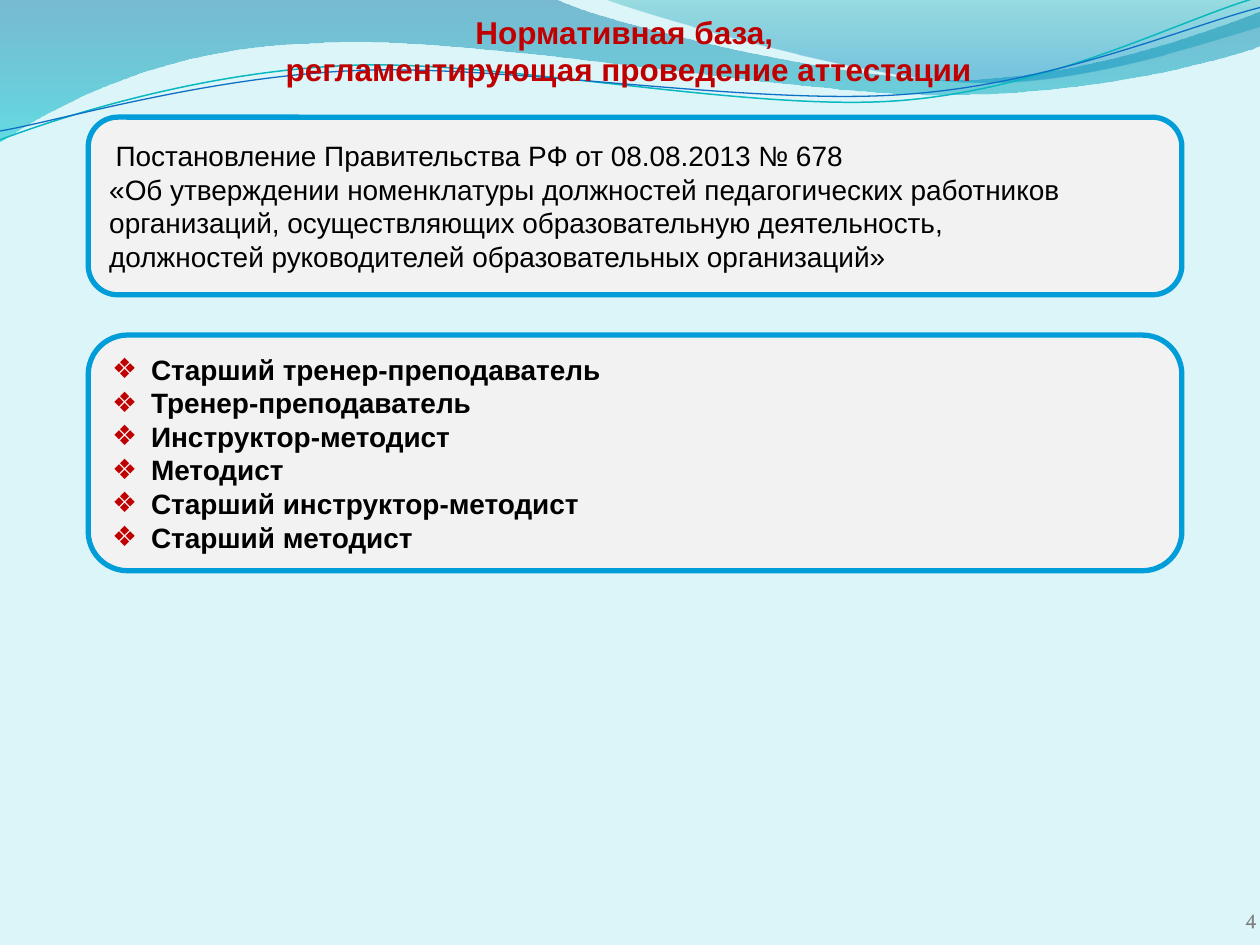
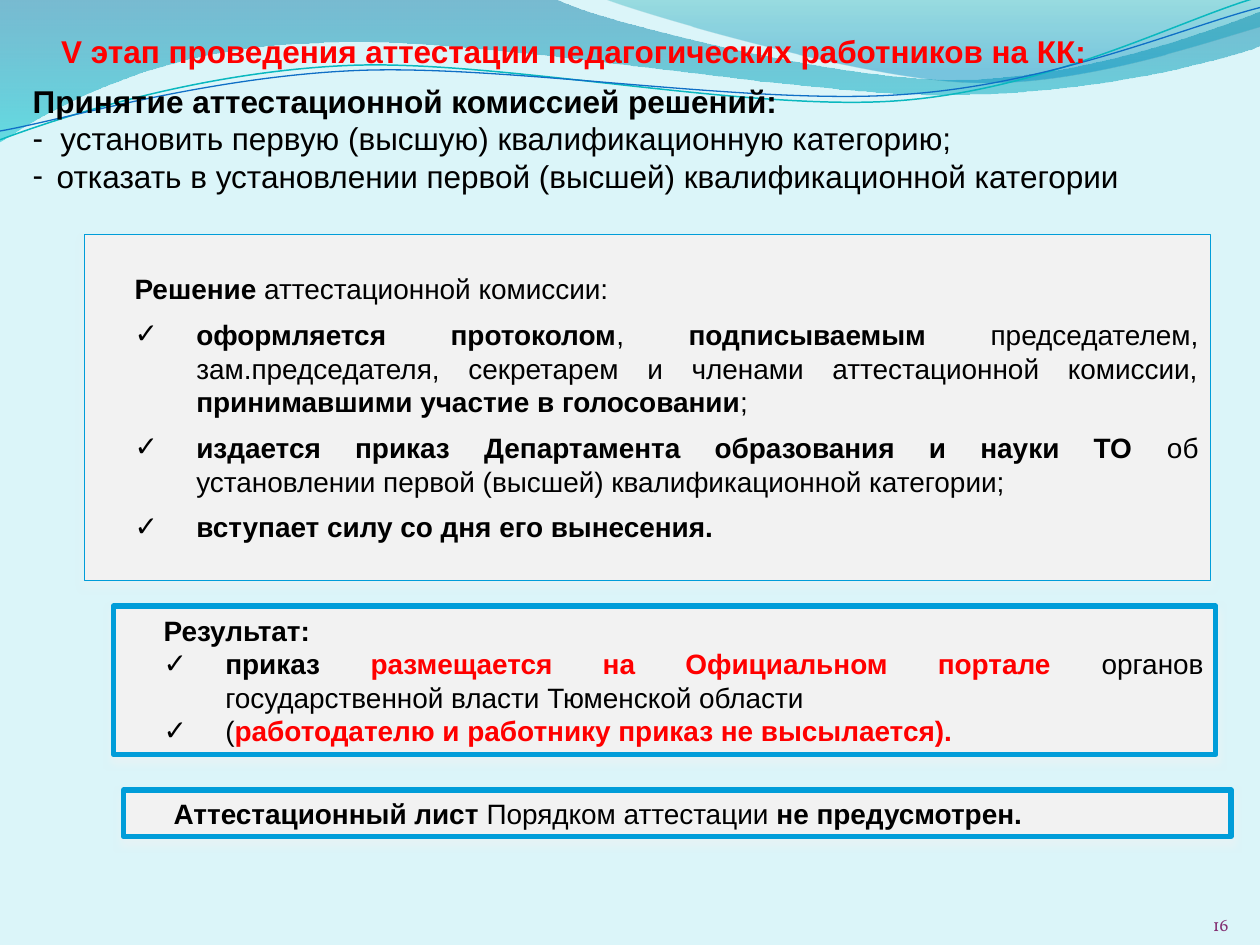
from lxml import etree
from pptx import Presentation, util as u
from pptx.dml.color import RGBColor
from pptx.enum import shapes, text
from pptx.oxml.ns import qn

COLORS = {
    "background": "DBF5F9", "card": "F2F2F2", "border": "009DD9",
    "black": "000000", "dark_red": "C00000", "red": "FF0000",
    "gray": "808080", "purple": "832F72", "teal_line": "0AB8BF", "blue_line": "0F6FC6",
    "wide_top": "0074A1", "wide_bottom": "00C6CF",
    "right_top": "00A1A9", "right_bottom": "008BBF", "shadow": "F2F2F2",
}
COLORS = {name: RGBColor.from_string(value) for name, value in COLORS.items()}
FONT = "Arial"
LEFT, CENTER, RIGHT, JUSTIFY = (text.PP_ALIGN.LEFT, text.PP_ALIGN.CENTER,
                                text.PP_ALIGN.RIGHT, text.PP_ALIGN.JUSTIFY)
TOP, MIDDLE, BOTTOM = (text.MSO_ANCHOR.TOP, text.MSO_ANCHOR.MIDDLE, text.MSO_ANCHOR.BOTTOM)
RECT, ROUNDED = shapes.MSO_SHAPE.RECTANGLE, shapes.MSO_SHAPE.ROUNDED_RECTANGLE


def add_para(frame, spans, size=16, align=LEFT, left=0, indent=0,
             bullet=None, bullet_color="black", before=0, font=FONT):
    """Add a paragraph of (words, bold, colour) spans; the first fills the empty one."""
    para = frame.paragraphs[0]
    if para.runs:
        para = frame.add_paragraph()
    para.alignment = align
    para.space_before = u.Pt(before)
    props = para._p.get_or_add_pPr()
    props.set("marL", str(u.Inches(left)))
    props.set("indent", str(u.Inches(indent)))
    if bullet:
        color = etree.SubElement(props, qn("a:buClr"))
        etree.SubElement(color, qn("a:srgbClr"), val=str(COLORS[bullet_color]))
        etree.SubElement(props, qn("a:buFont"), typeface=FONT)
        etree.SubElement(props, qn("a:buChar"), char=bullet)
    else:
        etree.SubElement(props, qn("a:buNone"))
    for words, bold, color in spans:
        span = para.add_run()
        span.text = words
        span.font.name = font
        span.font.size = u.Pt(size)
        span.font.bold = bold
        span.font.color.rgb = COLORS[color]


def add_card(page, kind, place, line_width=3, shadow=False):
    """Add a bordered grey card and return its text frame."""
    card = page.shapes.add_shape(kind, *map(u.Inches, place))
    card.fill.solid()
    card.fill.fore_color.rgb = COLORS["card"]
    card.line.color.rgb = COLORS["border"]
    card.line.width = u.Pt(line_width)
    card.shadow.inherit = False
    if shadow:
        effects = card._element.spPr.find(qn("a:effectLst"))
        outer = etree.SubElement(effects, qn("a:outerShdw"), blurRad=str(u.Pt(4.5)),
                                 dist=str(u.Pt(3)), dir="5400000", rotWithShape="0")
        color = etree.SubElement(outer, qn("a:srgbClr"), val=str(COLORS["shadow"]))
        etree.SubElement(color, qn("a:alpha"), val="48000")
    card.text_frame.word_wrap = True
    card.text_frame.vertical_anchor = MIDDLE
    return card.text_frame


deck = Presentation()
deck.slide_width, deck.slide_height = u.Inches(10), u.Inches(7.5)
master = deck.slide_master
master.background.fill.solid()
master.background.fill.fore_color.rgb = COLORS["background"]
title_only = deck.slide_layouts[5]
rules_page = deck.slides.add_slide(title_only)
stage_page = deck.slides.add_slide(title_only)

# Waves shared through the master: a 2-number step is a line, a 6-number step a curve
waves = [
    ([(0, 0), (4.4, -0.01), (4.76, 0.17, 6.64, 0.63, 7.58, 0.63),
      (8.53, 0.63, 9.58, 0.26, 10, 0.09), (10.01, 0.36),
      (9.83, 0.44, 8.7, 0.76, 7.46, 0.75), (6.22, 0.75, 3.82, 0.28, 2.57, 0.34),
      (1.29, 0.36, 0.46, 0.83, -0.01, 1.13)],
     [("wide_top", 0, 45), ("wide_bottom", 1, 55)], None),
    ([(4.79, -0.01), (5.09, 0.11, 6.82, 0.62, 7.69, 0.65),
      (8.56, 0.69, 9.61, 0.32, 10, 0.21), (10, 0)],
     [("right_top", 0, 30), ("right_bottom", 0.8, 45)], None),
    ([(0, 1.11), (0.48, 0.93, 1.58, 0.57, 2.77, 0.52),
      (3.95, 0.47, 5.93, 0.89, 7.13, 0.8), (8.33, 0.71, 9.38, 0.15, 9.98, -0.02)],
     None, ("teal_line", 0.85)),
    ([(0, 1.04), (0.47, 0.96, 1.64, 0.61, 2.83, 0.56),
      (4.03, 0.51, 5.97, 0.84, 7.17, 0.75), (8.36, 0.67, 9.41, 0.21, 10, 0.06)],
     None, ("blue_line", 0.75)),
]
for layer, (steps, stops, stroke) in enumerate(waves):
    points = [(u.Inches(x), u.Inches(y))
              for step in steps for x, y in zip(step[::2], step[1::2])]
    builder = rules_page.shapes.build_freeform(*points[0])
    builder.add_line_segments(points[1:], close=stops is not None)
    wave = builder.convert_to_shape()
    wave.shadow.inherit = False

    # Join each curve's three straight segments into one Bezier segment
    segments = iter(list(wave._element.iter(qn("a:lnTo"))))
    for step in steps[1:]:
        segment = next(segments)
        if len(step) == 6:
            curve = etree.Element(qn("a:cubicBezTo"))
            segment.addprevious(curve)
            for part in (segment, next(segments), next(segments)):
                curve.append(part[0])
                part.getparent().remove(part)

    if stops:
        wave.line.fill.background()
        wave.fill.gradient()
        wave.fill.gradient_angle = 270
        for stop, (color, position, _) in zip(wave.fill.gradient_stops, stops):
            stop.color.rgb = COLORS[color]
            stop.position = position
        tints = wave._element.spPr.iter(qn("a:srgbClr"))
        for tint, (_, _, opacity) in zip(tints, stops):
            etree.SubElement(tint, qn("a:alpha"), val=str(opacity * 1000))
    else:
        wave.fill.background()
        wave.line.color.rgb = COLORS[stroke[0]]
        wave.line.width = u.Pt(stroke[1])
    master.shapes.element.insert(2 + layer, wave._element)

# Titles; the second one carries the decisions below it
for page, place, anchor in [
    (rules_page, (-0.01, 0.05, 10, 0.7), BOTTOM),
    (stage_page, (0.16, 0.2, 8.86, 1.41), TOP),
]:
    title = page.shapes.title
    title.left, title.top, title.width, title.height = map(u.Inches, place)
    title.text_frame.auto_size = text.MSO_AUTO_SIZE.NONE
    title.text_frame.vertical_anchor = anchor
    title.text_frame.word_wrap = True
for line in ["Нормативная база, ", "регламентирующая проведение аттестации"]:
    add_para(rules_page.shapes.title.text_frame, [(line, True, "dark_red")], 18, CENTER)
stage_frame = stage_page.shapes.title.text_frame
add_para(stage_frame,
         [("V этап проведения аттестации педагогических работников на КК: ", True, "red")],
         18, CENTER)
add_para(stage_frame,
         [("Принятие аттестационной комиссией решений:", True, "black")], 18, before=7)
for decision, hang in [
    ("установить первую (высшую) квалификационную категорию;", 0.22),
    ("отказать в установлении первой (высшей) квалификационной категории", 0.19),
]:
    add_para(stage_frame, [(decision, False, "black")], 18,
             left=hang, indent=-hang, bullet="-")

# Page numbers
for page, number, place, size, color in [
    (rules_page, "4", (7.65, 6.98, 2.33, 0.4), 12, "gray"),
    (stage_page, "16", (8.92, 7.02, 0.83, 0.4), 10, "purple"),
]:
    frame = page.shapes.add_textbox(*map(u.Inches, place)).text_frame
    frame.margin_left = frame.margin_top = frame.margin_right = frame.margin_bottom = 0
    frame.word_wrap = True
    frame.vertical_anchor = BOTTOM
    add_para(frame, [(number, False, color)], size, RIGHT, font="Vollkorn")

# Regulations: decree and positions
decree = add_card(rules_page, ROUNDED, (0.7, 0.93, 8.68, 1.41))
for row, line in enumerate([
    "Постановление Правительства РФ от 08.08.2013 № 678",
    "«Об утверждении номенклатуры должностей педагогических работников",
    "организаций, осуществляющих образовательную деятельность,",
    "должностей руководителей образовательных организаций»",
]):
    add_para(decree, [(line, False, "black")], indent=0 if row else 0.05)

positions = add_card(rules_page, ROUNDED, (0.7, 2.66, 8.68, 1.87))
for position in ["Старший тренер-преподаватель", "Тренер-преподаватель",
                 "Инструктор-методист", "Методист",
                 "Старший инструктор-методист", "Старший методист"]:
    add_para(positions, [(position, True, "black")], left=0.31, indent=-0.31,
             bullet="❖", bullet_color="dark_red")

# Stage V: decision, certificate and result cards, each a heading with checked items
stage_cards = [
    ((0.67, 1.86, 8.94, 2.75), 0.75, 7,
     [("Решение ", True, "black"), ("аттестационной комиссии: ", False, "black")],
     [[("оформляется протоколом", True, "black"), (", ", False, "black"),
       ("подписываемым ", True, "black"),
       ("председателем, зам.председателя, секретарем и членами аттестационной комиссии, ",
        False, "black"),
       ("принимавшими участие в голосовании", True, "black"), (";", False, "black")],
      [("издается приказ Департамента образования и науки ТО ", True, "black"),
       ("об установлении первой (высшей) квалификационной категории;", False, "black")],
      [("вступает силу со дня его вынесения.", True, "black")]]),
    ((0.98, 6.27, 8.79, 0.37), 3, 0,
     [("Аттестационный лист ", True, "black"), ("Порядком аттестации ", False, "black"),
      ("не предусмотрен.", True, "black")], []),
    ((0.9, 4.81, 8.75, 1.18), 3, 0,
     [("Результат:", True, "black")],
     [[("приказ ", True, "black"), ("размещается на Официальном портале ", True, "red"),
       ("органов государственной власти Тюменской области ", False, "black")],
      [("(", False, "black"),
       ("работодателю и работнику приказ не высылается).", True, "red")]]),
]
for place, line_width, gap, heading, items in stage_cards:
    frame = add_card(stage_page, RECT, place, line_width, shadow=True)
    add_para(frame, heading, align=JUSTIFY, left=0.3)
    for item in items:
        add_para(frame, item, align=JUSTIFY, left=0.79, indent=-0.49, bullet="✓", before=gap)

deck.save("out.pptx")
